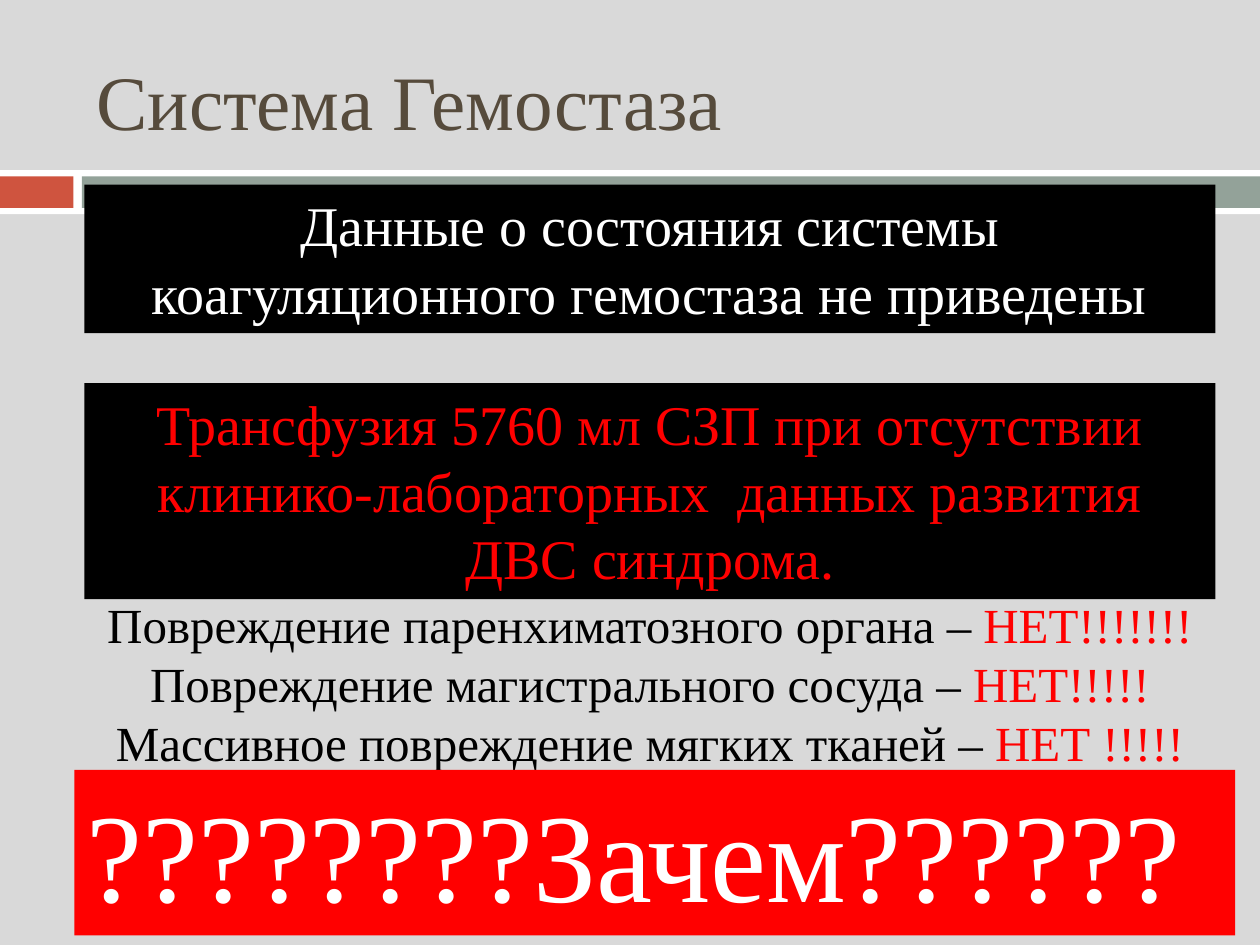
from dataclasses import dataclass

from pptx import Presentation
from pptx.dml.color import RGBColor
from pptx.enum import shapes, text
from pptx.util import Pt


@dataclass(frozen=True)
class Theme:
    font: str = "Times New Roman"
    background: str = "D9D9D9"
    title: str = "564B3C"
    accent: str = "CF543F"
    band: str = "93A299"
    white: str = "FFFFFF"
    black: str = "000000"
    red: str = "FF0000"
    title_size: int = 44
    statement_size: int = 32
    list_size: int = 28
    question_size: int = 72


theme = Theme()


def add_rectangle(left, top, width, height, color):
    shape = slide.shapes.add_shape(
        shapes.MSO_SHAPE.RECTANGLE, Pt(left), Pt(top), Pt(width), Pt(height))
    shape.shadow.inherit = False
    shape.fill.solid()
    shape.fill.fore_color.rgb = RGBColor.from_string(color)
    shape.line.fill.background()
    return shape


def add_run(paragraph, wording, size, color):
    run = paragraph.add_run()
    run.text = wording
    run.font.name = theme.font
    run.font.size = Pt(size)
    run.font.color.rgb = RGBColor.from_string(color)


presentation = Presentation()
presentation.slide_width = Pt(720)
presentation.slide_height = Pt(540)
slide = presentation.slides.add_slide(presentation.slide_layouts[5])
slide.background.fill.solid()
slide.background.fill.fore_color.rgb = RGBColor.from_string(theme.background)

for left, top, width, height, color in [
    (0, 97.2, 720, 25.2, theme.white),
    (0, 100.8, 42, 18, theme.accent),
    (46.8, 100.8, 673.2, 18, theme.band),
]:
    add_rectangle(left, top, width, height, color)

title = slide.shapes.title
title.left, title.top, title.width, title.height = Pt(48), Pt(18), Pt(642), Pt(78)
title.text_frame.vertical_anchor = text.MSO_ANCHOR.MIDDLE
title_paragraph = title.text_frame.paragraphs[0]
title_paragraph.alignment = text.PP_ALIGN.LEFT
add_run(title_paragraph, "Система Гемостаза", theme.title_size, theme.title)

center, left_aligned = text.PP_ALIGN.CENTER, text.PP_ALIGN.LEFT
blocks = [
    ((48.2, 105.6, 646.4, 84.8), theme.black, theme.statement_size, center,
     [[("Данные о состояния системы коагуляционного гемостаза не приведены", theme.white)]]),
    ((48.2, 218.9, 646.4, 123.6), theme.black, theme.statement_size, center,
     [[("Трансфузия 5760 мл СЗП при отсутствии клинико-лабораторных  данных развития ДВС синдрома.",
        theme.red)]]),
    ((48.2, 336.2, 646.4, 108.7), None, theme.list_size, center,
     [[(damage, theme.black), (answer, theme.red)] for damage, answer in [
         ("Повреждение паренхиматозного органа – ", "НЕТ!!!!!!!"),
         ("Повреждение магистрального сосуда – ", "НЕТ!!!!!"),
         ("Массивное повреждение мягких тканей – ", "НЕТ !!!!!"),
     ]]),
    ((42.5, 440, 663.3, 94.5), theme.red, theme.question_size, left_aligned,
     [[("????????Зачем??????", theme.white)]]),
]

for box, fill, size, alignment, lines in blocks:
    if fill:
        shape = add_rectangle(*box, fill)
    else:
        shape = slide.shapes.add_textbox(*map(Pt, box))
    frame = shape.text_frame
    frame.word_wrap = True
    frame.auto_size = text.MSO_AUTO_SIZE.SHAPE_TO_FIT_TEXT
    frame.vertical_anchor = text.MSO_ANCHOR.TOP
    for index, runs in enumerate(lines):
        paragraph = frame.add_paragraph() if index else frame.paragraphs[0]
        paragraph.alignment = alignment
        for wording, color in runs:
            add_run(paragraph, wording, size, color)

presentation.save("out.pptx")
